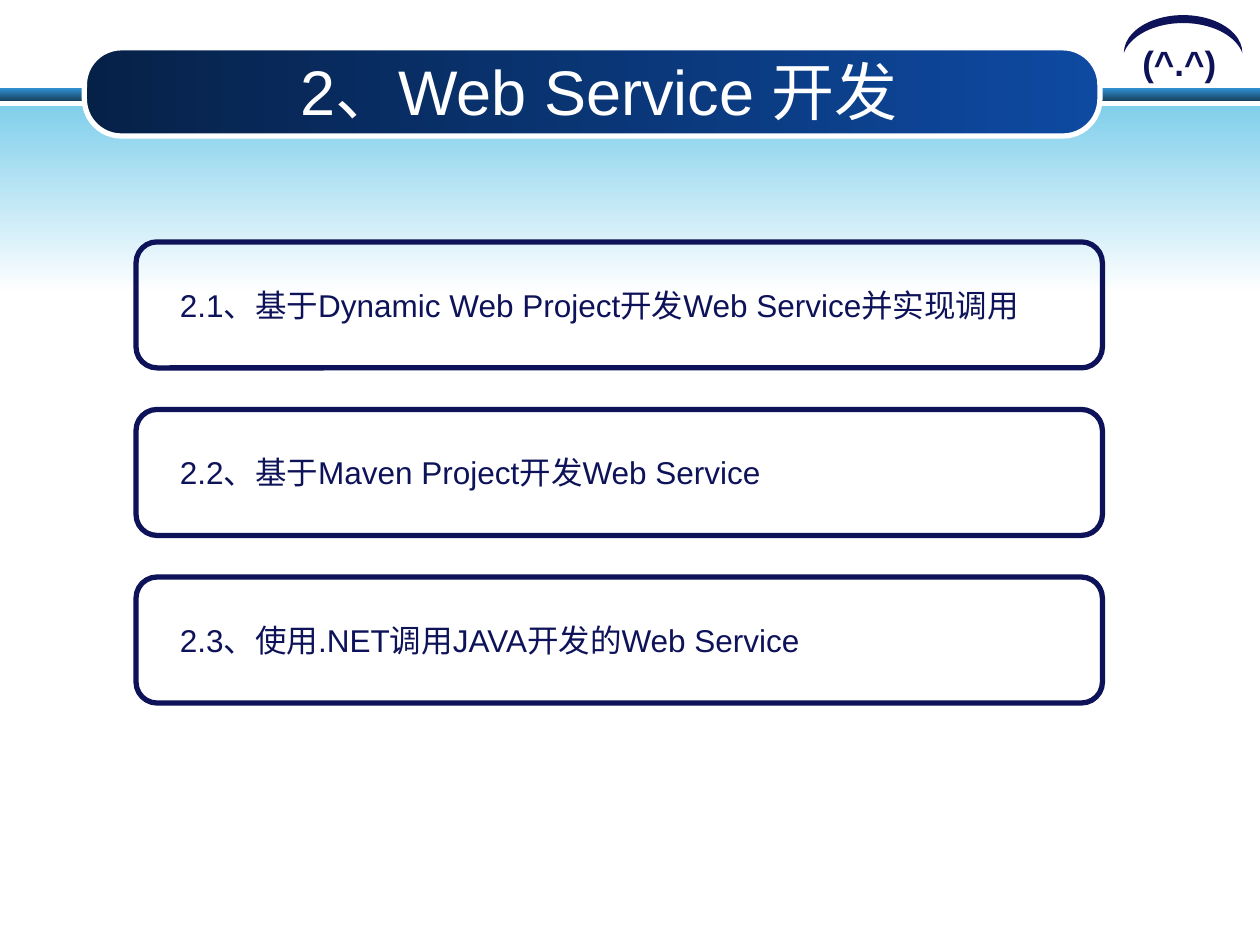
"""Build the section slide on Web Service development."""
from pptx import Presentation
from pptx.dml.color import RGBColor
from pptx.enum import shapes, text
from pptx.util import Inches, Pt

COLORS = {
    "navy": "0D1259",
    "white": "FFFFFF",
    "strip_top": "3191D3",
    "strip_bottom": "17435F",
    "sky": "81CFEB",
    "title_left": "062148",
    "title_right": "0E4AA2",
}
SHAPE = shapes.MSO_SHAPE


def color(name):
    return RGBColor.from_string(COLORS[name])


def add_text(content, left, top, width, height, size=18, fill="navy", bold=False,
             align=text.PP_ALIGN.LEFT, anchor=text.MSO_ANCHOR.TOP):
    box = page.shapes.add_textbox(Inches(left), Inches(top), Inches(width), Inches(height))
    frame = box.text_frame
    frame.word_wrap = True
    frame.vertical_anchor = anchor
    para = frame.paragraphs[0]
    para.alignment = align
    span = para.add_run()
    span.text = content
    span.font.name = "Arial"
    span.font.size = Pt(size)
    span.font.bold = bold
    span.font.color.rgb = color(fill)


deck = Presentation()
deck.slide_width, deck.slide_height = Inches(10), Inches(7.5)
page = deck.slides.add_slide(deck.slide_layouts[6])

bands = [
    (SHAPE.RECTANGLE, 0, 0.7, 10, 0.1, "strip_top", "strip_bottom", 270),
    (SHAPE.RECTANGLE, 0, 0.84, 10, 1.49, "sky", "white", 270),
    (SHAPE.ROUNDED_RECTANGLE, 0.67, 0.38, 8.06, 0.7, "title_left", "title_right", 0),
]
for kind, left, top, width, height, start, end, angle in bands:
    band = page.shapes.add_shape(kind, Inches(left), Inches(top), Inches(width), Inches(height))
    band.shadow.inherit = False
    band.fill.gradient()
    band.fill.gradient_angle = angle
    for stop, name in zip(band.fill.gradient_stops, (start, end)):
        stop.color.rgb = color(name)
    band.line.fill.background()

title_bar = band
title_bar.adjustments[0] = 0.42
title_bar.line.color.rgb = color("white")
title_bar.line.width = Pt(3)

add_text(" (^.^)", 8.89, 0.28, 1.08, 0.43, size=20, bold=True)
moon = page.shapes.add_shape(SHAPE.MOON, Inches(9.24), Inches(-0.2), Inches(0.3), Inches(0.94))
moon.shadow.inherit = False
moon.rotation = 90
moon.adjustments[0] = 0.21
moon.fill.solid()
moon.fill.fore_color.rgb = color("navy")
moon.line.fill.background()

add_text("2、Web Service 开发", 0.92, 0.41, 7.67, 0.62, size=36, fill="white",
         align=text.PP_ALIGN.CENTER, anchor=text.MSO_ANCHOR.MIDDLE)

topics = [
    "2.1、基于Dynamic Web Project开发Web Service并实现调用",
    "2.2、基于Maven Project开发Web Service",
    "2.3、使用.NET调用JAVA开发的Web Service",
]
for index, topic in enumerate(topics):
    top = 1.92 + index * 1.33
    card = page.shapes.add_shape(SHAPE.ROUNDED_RECTANGLE, Inches(1.08), Inches(top),
                                 Inches(7.67), Inches(1))
    card.shadow.inherit = False
    card.fill.background()
    card.line.color.rgb = color("navy")
    card.line.width = Pt(3)
    add_text(topic, 1.33, top + 0.3, 7.17, 0.4)

deck.save("out.pptx")
